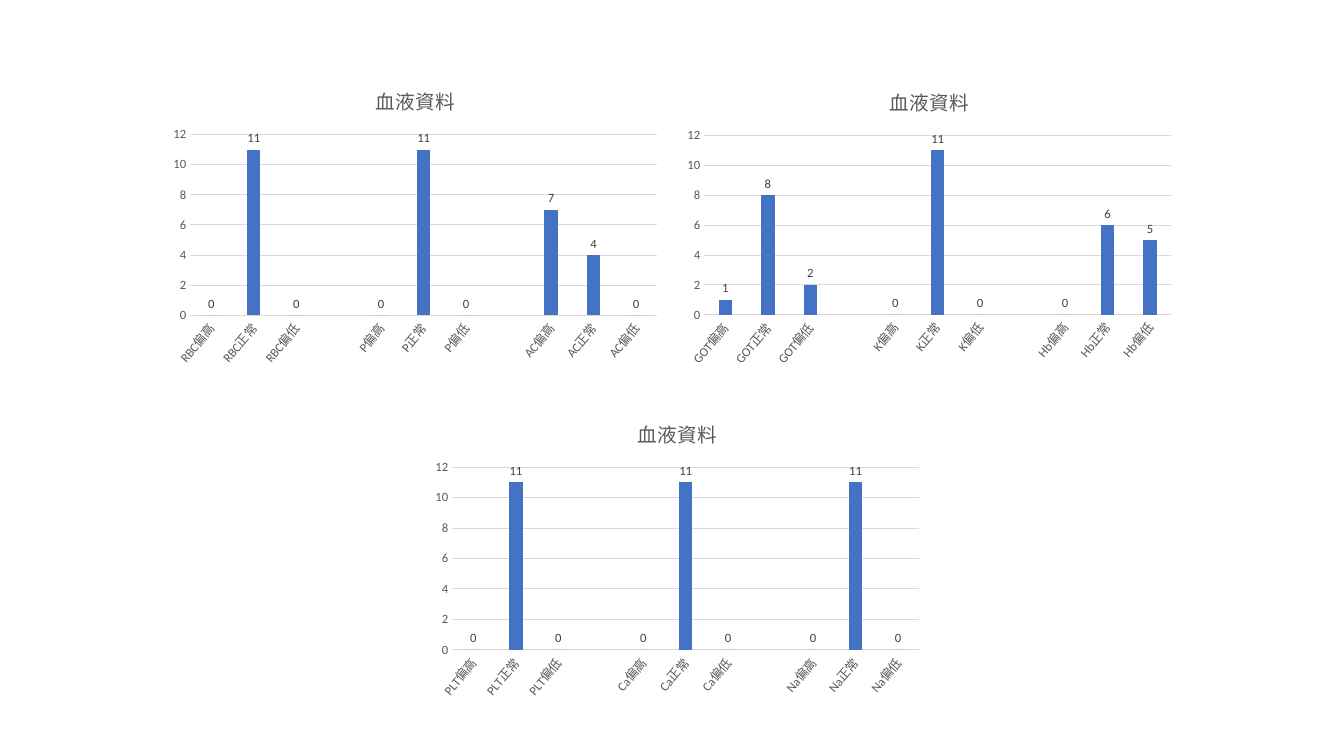
from dataclasses import dataclass

from pptx import Presentation
from pptx.chart import data as chart_data
from pptx.dml.color import RGBColor
from pptx.enum import chart as chart_enum
from pptx.oxml.ns import qn
from pptx.util import Pt

FONT = "Calibri"
TITLE = "血液資料"
LEVELS = ("偏高", "正常", "偏低")
BAR, GRID, TEXT, LABEL = "4472C4", "D9D9D9", "595959", "404040"
CHART_WIDTH, CHART_HEIGHT = 360, 216
NAME_ANGLE = -50  # degrees
ANGLE_UNITS = 60000  # per degree


@dataclass(frozen=True)
class BloodChart:
    left: float
    top: float
    tests: dict[str, tuple[int, int, int]]  # counts for high, normal, low


BLOOD_CHARTS = (
    BloodChart(116.64, 49.68, {"RBC": (0, 11, 0), "P": (0, 11, 0), "AC": (7, 4, 0)}),
    BloodChart(483.84, 50.4, {"GOT": (1, 8, 2), "K": (0, 11, 0), "Hb": (0, 6, 5)}),
    BloodChart(303.84, 287.28, {"PLT": (0, 11, 0), "Ca": (0, 11, 0), "Na": (0, 11, 0)}),
)


def color(value: str) -> RGBColor:
    return RGBColor.from_string(value)


def style_font(font, size: float, fill: str) -> None:
    font.name = FONT
    font.size = Pt(size)
    font.bold = False
    font.color.rgb = color(fill)


def style_line(line, fill: str) -> None:
    line.color.rgb = color(fill)
    line.width = Pt(0.75)


def collect_counts(tests: dict[str, tuple[int, int, int]]) -> chart_data.CategoryChartData:
    """List each test's three levels, with an empty category between tests."""
    names, counts = [], []
    for test, values in tests.items():
        if names:
            names.append("")
            counts.append(None)
        names.extend(test + level for level in LEVELS)
        counts.extend(values)
    result = chart_data.CategoryChartData()
    result.categories = names
    result.add_series("Series 1", counts)
    return result


def draw_chart(page, blood: BloodChart) -> None:
    chart = page.shapes.add_chart(
        chart_enum.XL_CHART_TYPE.COLUMN_CLUSTERED,
        Pt(blood.left), Pt(blood.top), Pt(CHART_WIDTH), Pt(CHART_HEIGHT),
        collect_counts(blood.tests),
    ).chart
    style_font(chart.font, 10, "000000")
    chart.has_legend = False

    # Title
    span = chart.chart_title.text_frame.paragraphs[0].add_run()
    span.text = TITLE
    style_font(span.font, 14, TEXT)
    chart.chart_title.include_in_layout = False

    # Axes
    for axis in (chart.category_axis, chart.value_axis):
        axis.major_tick_mark = chart_enum.XL_TICK_MARK.NONE
        axis.minor_tick_mark = chart_enum.XL_TICK_MARK.NONE
        style_font(axis.tick_labels.font, 9, TEXT)
    style_line(chart.category_axis.format.line, GRID)
    chart.value_axis.format.line.fill.background()
    chart.value_axis.has_major_gridlines = True
    style_line(chart.value_axis.major_gridlines.format.line, GRID)

    # Slanted category names
    for axis_xml in chart.element.iter(qn("c:catAx")):
        for body in axis_xml.iter(qn("a:bodyPr")):
            body.set("rot", str(NAME_ANGLE * ANGLE_UNITS))

    # Columns and their values
    plot = chart.plots[0]
    plot.gap_width = 219
    plot.overlap = -27
    plot.vary_by_categories = False
    columns = plot.series[0]
    columns.format.fill.solid()
    columns.format.fill.fore_color.rgb = color(BAR)
    columns.invert_if_negative = False
    labels = columns.data_labels
    labels.show_value = True
    labels.position = chart_enum.XL_LABEL_POSITION.OUTSIDE_END
    style_font(labels.font, 9, LABEL)


def main() -> None:
    deck = Presentation()
    deck.slide_width, deck.slide_height = Pt(960), Pt(540)
    page = deck.slides.add_slide(deck.slide_layouts.get_by_name("Blank"))
    for blood in BLOOD_CHARTS:
        draw_chart(page, blood)
    deck.save("out.pptx")


if __name__ == "__main__":
    main()
